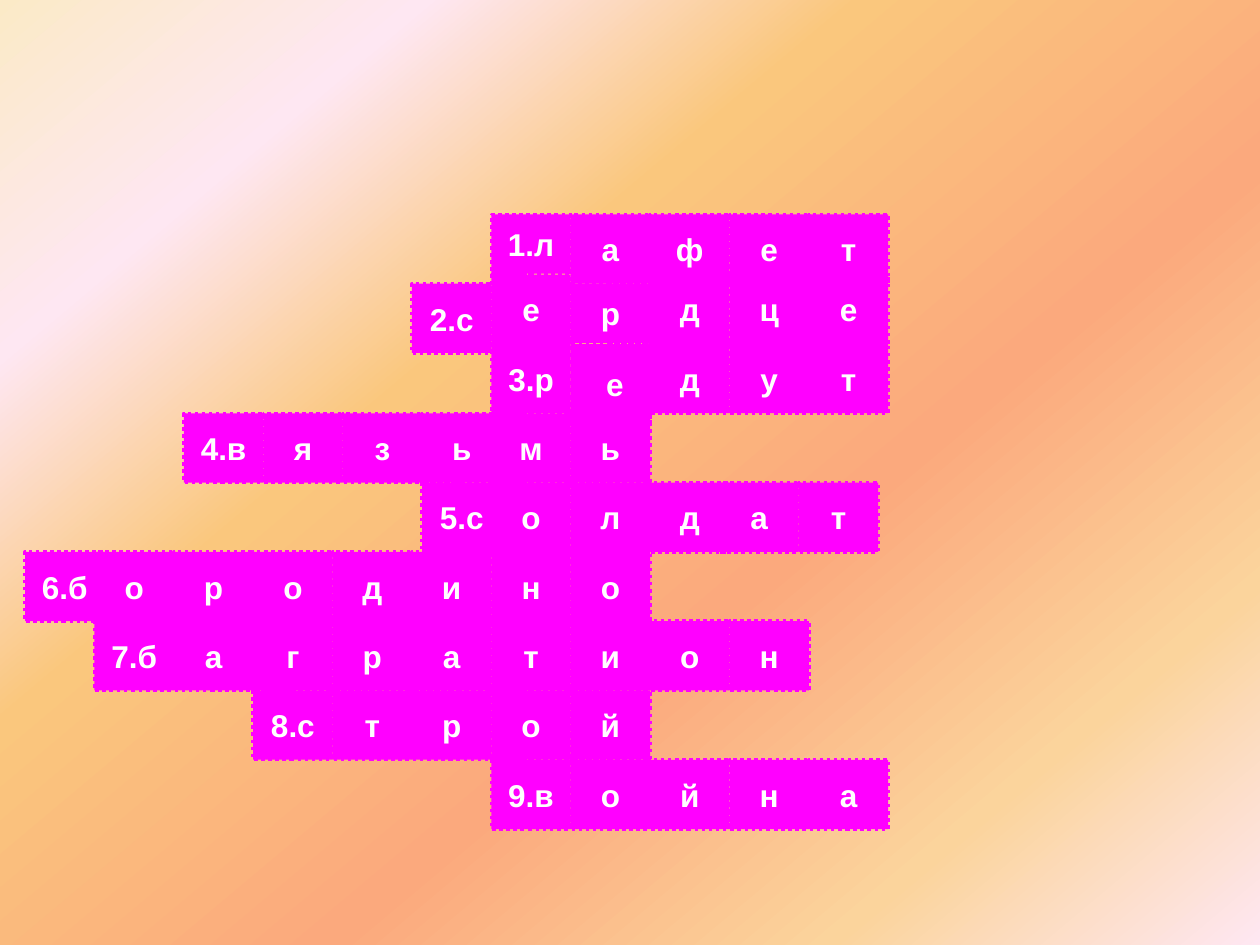
from copy import deepcopy

from pptx import Presentation, util as u
from pptx.dml.color import RGBColor
from pptx.enum import dml, shapes, text

# (start column, letters); column 0 is the shared column of the crossword
ANSWERS = [
    (0, "лафет"),
    (-1, "сердце"),
    (0, "редут"),
    (-4, "вязьмь"),
    (-1, "солдат"),
    (-6, "бородино"),
    (-5, "багратион"),
    (-3, "строй"),
    (0, "война"),
]
BACKGROUND = [(0, "FBEAC7"), (18, "FEE7F2"), (36, "FAC77D"),
              (61, "FBA97D"), (82, "FBD49C"), (100, "FEE7F2")]
MAGENTA, WHITE = "FF00FF", "FFFFFF"
LETTER_FONT = {"name": "Arial", "size": u.Pt(18), "bold": True}

CELL_W, CELL_H = 0.63, 0.55
ORIGIN_X, ORIGIN_Y = 3.9, 1.63
STEP = 0.08
# (row, column): offsets of left, top and height, in steps
NUDGES = {(0, column): (0, 0.9, 0) for column in range(1, 5)}
NUDGES |= {(3, column): (1, 0, 0) for column in range(-4, 0)}
NUDGES |= {(0, 0): (0, 0.9, -1), (1, -1): (0, 0.9, 0), (1, 1): (0, 0.9, -1),
           (2, 1): (0, 0, 1), (4, -1): (1, 0, 0), (4, 3): (-1, 0, 0),
           (4, 4): (-1, 0, 0), (5, -6): (1, 0, 0)}
INDENTS = {(2, 1): 0.07}


def color(value):
    """Return the RGB colour of a hex string."""
    return RGBColor.from_string(value)


def paint_background(slide):
    """Fill the slide with the diagonal gradient."""
    fill = slide.background.fill
    fill.gradient()
    fill.gradient_angle = 360 - 50
    stop_list = fill._fill._gradFill.gsLst
    while len(stop_list) < len(BACKGROUND):
        stop_list.append(deepcopy(stop_list[0]))
    for stop, (position, value) in zip(fill.gradient_stops, BACKGROUND):
        stop.position = position / 100
        stop.color.rgb = color(value)


def add_cell(slide, row, column, letter):
    """Draw one lettered square of the crossword."""
    dx, dy, dh = (STEP * n for n in NUDGES.get((row, column), (0, 0, 0)))
    cell = slide.shapes.add_shape(
        shapes.MSO_SHAPE.RECTANGLE,
        u.Inches(ORIGIN_X + column * CELL_W + dx),
        u.Inches(ORIGIN_Y + row * CELL_H + dy),
        u.Inches(CELL_W), u.Inches(CELL_H + dh))
    cell.shadow.inherit = False
    cell.fill.solid()
    cell.fill.fore_color.rgb = color(MAGENTA)
    cell.line.color.rgb = color(MAGENTA)
    cell.line.width = u.Pt(2)
    cell.line.dash_style = dml.MSO_LINE.ROUND_DOT
    frame = cell.text_frame
    frame.vertical_anchor = text.MSO_ANCHOR.MIDDLE
    frame.margin_left = u.Inches(0.1 + INDENTS.get((row, column), 0))
    paragraph = frame.paragraphs[0]
    paragraph.alignment = text.PP_ALIGN.CENTER
    run = paragraph.add_run()
    run.text = letter
    for name, value in LETTER_FONT.items():
        setattr(run.font, name, value)
    run.font.color.rgb = color(WHITE)


def main():
    """Build the crossword slide."""
    deck = Presentation()
    deck.slide_width, deck.slide_height = u.Inches(10), u.Inches(7.5)
    slide = deck.slides.add_slide(deck.slide_layouts[6])
    paint_background(slide)
    for row, (start, word) in enumerate(ANSWERS):
        for place, letter in enumerate(word):
            label = letter if place else f"{row + 1}.{letter}"
            add_cell(slide, row, start + place, label)
    deck.save("out.pptx")


if __name__ == "__main__":
    main()
